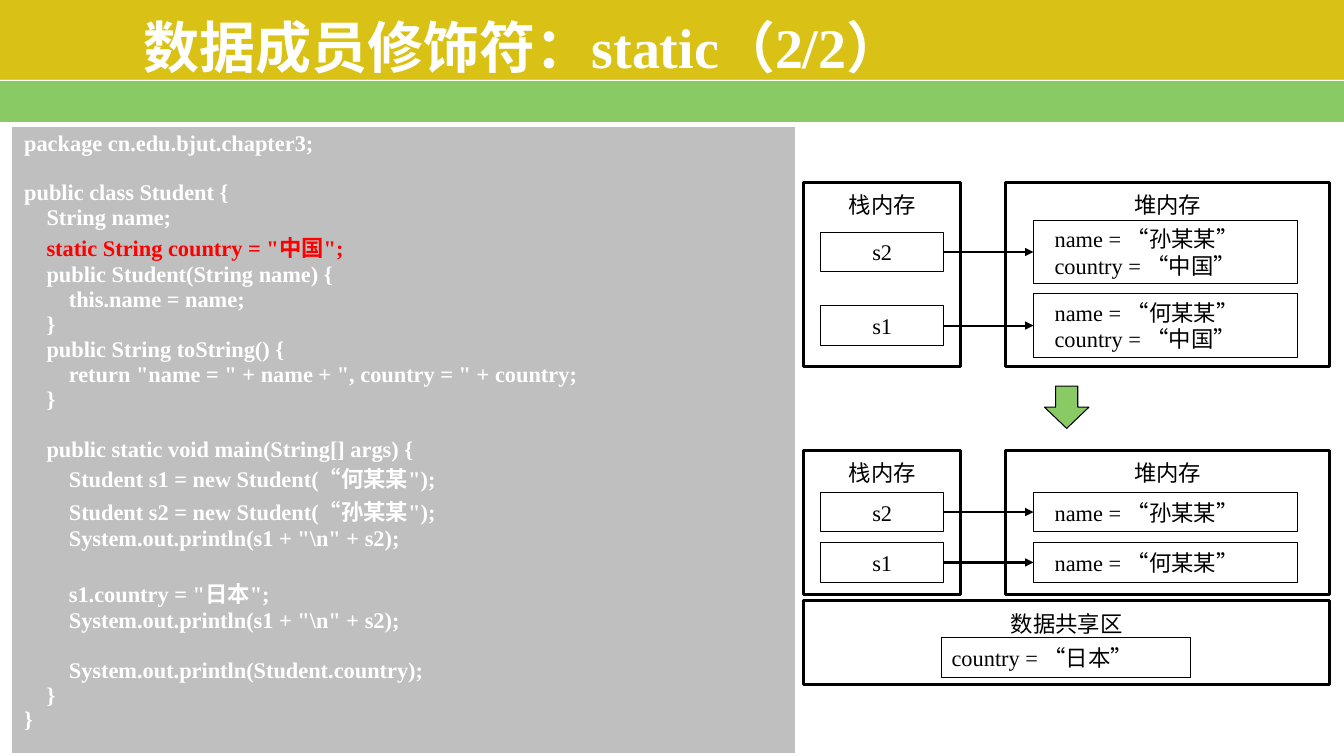
from dataclasses import dataclass

from lxml import etree
from pptx import Presentation
from pptx.dml.color import RGBColor
from pptx.enum import shapes as forms, text as txt
from pptx.oxml import ns
from pptx.util import Inches, Pt


@dataclass(frozen=True)
class Theme:
    font: str = "Times New Roman"
    gold: str = "D9C215"
    green: str = "89CA64"
    gray: str = "BFBFBF"
    white: str = "FFFFFF"
    black: str = "000000"
    red: str = "FF0000"
    head: int = 40
    body: int = 16
    thin: float = 0.75
    wire: float = 1.5
    thick: float = 2.25


THEME = Theme()

CODE = r'''package cn.edu.bjut.chapter3;

public class Student {
    String name;
    static String country = "中国";
    public Student(String name) {
        this.name = name;
    }
    public String toString() {
        return "name = " + name + ", country = " + country;
    }

    public static void main(String[] args) {
        Student s1 = new Student(“何某某");
        Student s2 = new Student(“孙某某");
        System.out.println(s1 + "\n" + s2);

        s1.country = "日本";
        System.out.println(s1 + "\n" + s2);

        System.out.println(Student.country);
    }
}'''


def apply(item, form):
    for key, val in form.items():
        setattr(item, key, val)


def style(run, size, color, bold=False):
    apply(run.font, {"name": THEME.font, "size": Pt(size), "bold": bold})
    run.font.color.rgb = RGBColor.from_string(color)


def block(parts, box, fill, line=None, width=THEME.thin, kind="RECTANGLE"):
    shape = parts.add_shape(forms.MSO_SHAPE[kind], *map(Inches, box))
    shape.shadow.inherit = False
    shape.fill.solid()
    shape.fill.fore_color.rgb = RGBColor.from_string(fill)
    if line:
        shape.line.color.rgb = RGBColor.from_string(line)
        shape.line.width = Pt(width)
    else:
        shape.line.fill.background()
    return shape


def label(parts, box, lines, line=THEME.black, align="CENTER", inset=0.1):
    frame = block(parts, box, THEME.white, line).text_frame
    apply(frame, {
        "word_wrap": True,
        "vertical_anchor": txt.MSO_ANCHOR.MIDDLE,
        "margin_left": Inches(inset),
        "margin_right": Inches(0.1),
        "margin_top": Inches(0.05),
        "margin_bottom": Inches(0.05),
    })
    for i, words in enumerate(lines):
        para = frame.add_paragraph() if i else frame.paragraphs[0]
        para.alignment = txt.PP_ALIGN[align]
        run = para.add_run()
        run.text = words
        style(run, THEME.body, THEME.black)


def wire(parts, start, end, color, width, arrow=False):
    line = parts.add_connector(forms.MSO_CONNECTOR.STRAIGHT,
                               *map(Inches, start + end))
    line.line.color.rgb = RGBColor.from_string(color)
    line.line.width = Pt(width)
    if arrow:
        tail = etree.SubElement(line.line._get_or_add_ln(), ns.qn("a:tailEnd"))
        tail.set("type", "triangle")
    etree.SubElement(line._element.spPr, ns.qn("a:effectLst"))


def header(parts, box):
    left, top, width, high = box
    edge = top + 0.79
    block(parts, (left, edge, width, high - 0.79), THEME.green)
    block(parts, (left, top, width, 0.79), THEME.gold)
    wire(parts, (left, top + 0.8), (left + width, top + 0.8), THEME.white, 1)
    title = parts.add_textbox(*map(Inches, (left + 1.33, top + 0.19, 10.33, 0.53)))
    frame = title.text_frame
    apply(frame, {"word_wrap": True, "vertical_anchor": txt.MSO_ANCHOR.MIDDLE})
    run = frame.paragraphs[0].add_run()
    run.text = "数据成员修饰符：static（2/2）"
    style(run, THEME.head, THEME.white, True)


def listing(parts, box):
    table = parts.add_table(1, 1, *map(Inches, box)).table
    cell = table.cell(0, 0)
    apply(cell, {
        "margin_left": Inches(0.13),
        "margin_right": Inches(0.13),
        "margin_top": Inches(0.05),
        "margin_bottom": Inches(0.05),
    })
    cell.fill.solid()
    cell.fill.fore_color.rgb = RGBColor.from_string(THEME.gray)
    frame = cell.text_frame
    for i, words in enumerate(CODE.split("\n")):
        para = frame.add_paragraph() if i else frame.paragraphs[0]
        if words:
            run = para.add_run()
            run.text = words
            hot = words.lstrip().startswith("static")
            style(run, THEME.body, THEME.red if hot else THEME.white, True)
        else:
            mark = etree.SubElement(para._p, ns.qn("a:endParaRPr"))
            mark.set("sz", str(THEME.body * 100))
            etree.SubElement(mark, ns.qn("a:latin")).set("typeface", THEME.font)


def memory(parts, box, rows, tall):
    left, top, width, high = box
    heap = left + 2
    for x, wide, name in ((left, 1.56, "栈内存"), (heap, width - 2, "堆内存")):
        block(parts, (x, top, wide, high), THEME.white, THEME.black, THEME.thick)
        label(parts, (x + (wide - 1.22) / 2, top + 0.02, 1.22, 0.4),
              [name], THEME.white)
    for name, drop, lines in rows:
        mid = top + drop
        label(parts, (left + 0.17, mid - 0.195, 1.22, 0.39), [name])
        label(parts, (heap + 0.28, mid - tall / 2, 2.62, tall),
              lines, align="LEFT", inset=0.21)
        wire(parts, (left + 1.39, mid), (heap + 0.28, mid),
             THEME.black, THEME.wire, True)


def shared(parts, box):
    left, top, width, high = box
    block(parts, box, THEME.white, THEME.black, THEME.thick)
    label(parts, (left + 0.97, top + 0.03, 3.28, 0.4), ["数据共享区"], THEME.white)
    label(parts, (left + 1.37, top + 0.36, 2.47, 0.4),
          ["country = “日本”"], align="LEFT")


def main():
    deck = Presentation()
    apply(deck, {"slide_width": Inches(13.33), "slide_height": Inches(7.5)})
    parts = deck.slides.add_slide(deck.slide_layouts[6]).shapes
    header(parts, (0, 0, 13.33, 1.21))
    listing(parts, (0.11, 1.25, 7.78, 6.05))
    block(parts, (10.36, 3.83, 0.44, 0.42), THEME.green, THEME.black,
          kind="DOWN_ARROW")
    sun, he, land = "name = “孙某某”", "name = “何某某”", "country = “中国”"
    first = parts.add_group_shape().shapes
    memory(first, (7.97, 1.81, 5.22, 1.83),
           [("s2", 0.69, [sun, land]), ("s1", 1.42, [he, land])], 0.63)
    second = parts.add_group_shape().shapes
    memory(second, (7.97, 4.47, 5.22, 1.43),
           [("s2", 0.61, [sun]), ("s1", 1.11, [he])], 0.39)
    shared(second, (7.97, 5.96, 5.22, 0.83))
    deck.save("out.pptx")


if __name__ == "__main__":
    main()
